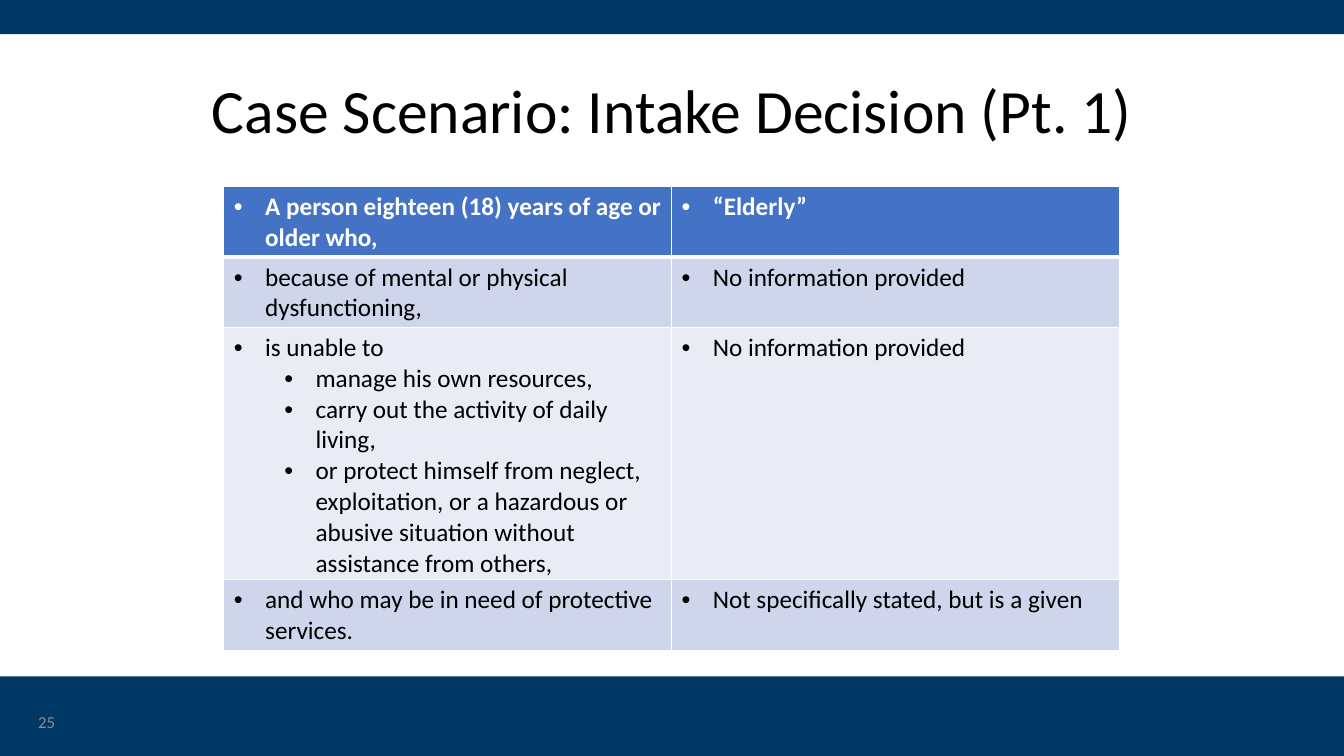
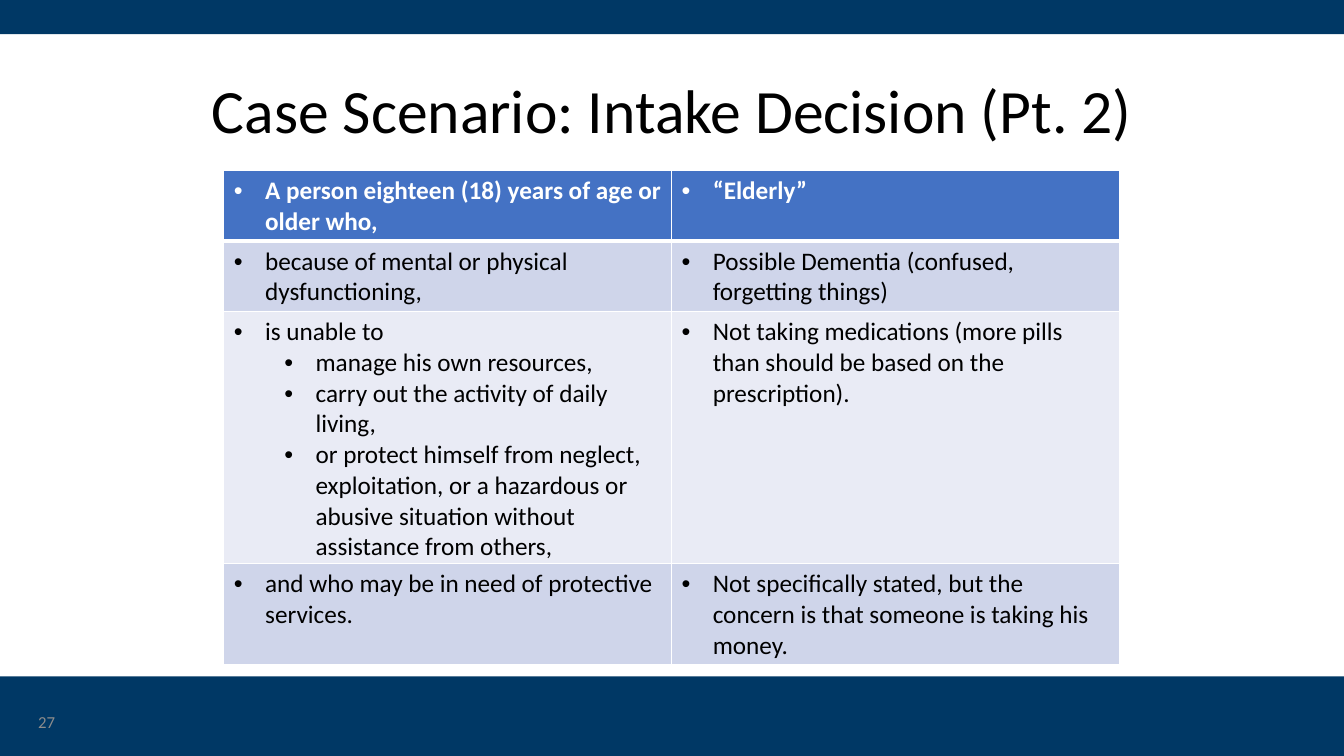
"""Build two case scenario slides, each with a criteria table."""
import dataclasses

import lxml.etree
import pptx
import pptx.dml.color
import pptx.enum.shapes
import pptx.enum.text
import pptx.oxml.ns
import pptx.presentation
import pptx.slide
import pptx.table
import pptx.util

Inches = pptx.util.Inches
Pt = pptx.util.Pt
RGBColor = pptx.dml.color.RGBColor
qn = pptx.oxml.ns.qn

NAVY = RGBColor(0x00, 0x38, 0x65)
BLUE = RGBColor(0x44, 0x72, 0xC4)
BAND_DARK = RGBColor(0xCF, 0xD5, 0xEA)
BAND_LIGHT = RGBColor(0xE9, 0xEB, 0xF5)
GRAY = RGBColor(0x8C, 0x8C, 0x8C)
BLACK = RGBColor(0x00, 0x00, 0x00)
WHITE = RGBColor(0xFF, 0xFF, 0xFF)

FONT = "Calibri"
SLIDE_W, SLIDE_H = 13.33, 7.5
COL_W = 4.44
LINE_H, CELL_PAD = 0.3, 0.1
HANGING, LEVEL_STEP = 0.31, 0.5
THIN, THICK = 1, 3


@dataclasses.dataclass(frozen=True)
class Band:
    """A full-width bar."""
    top: float
    height: float


@dataclasses.dataclass(frozen=True)
class Criterion:
    """One table row's requirement, with sub-items and its count of lines."""
    text: str
    lines: int = 2
    subitems: tuple[str, ...] = ()


@dataclasses.dataclass(frozen=True)
class Scenario:
    """What differs from one slide to the next."""
    title: str
    number: int
    table_top: float
    findings: tuple[str, ...]


BANDS = (Band(6.71, 0.79), Band(0, 0.34))

CRITERIA = (
    Criterion("A person eighteen (18) years of age or older who,"),
    Criterion("because of mental or physical dysfunctioning,"),
    Criterion("is unable to", 8, (
        "manage his own resources,",
        "carry out the activity of daily living,",
        "or protect himself from neglect, exploitation, or a hazardous or "
        "abusive situation without assistance from others,",
    )),
    Criterion("and who may be in need of protective services."),
)

SCENARIOS = (
    Scenario("Case Scenario: Intake Decision (Pt. 1)", 25, 1.85, (
        "“Elderly”",
        "No information provided",
        "No information provided",
        "Not specifically stated, but is a given",
    )),
    Scenario("Case Scenario: Intake Decision (Pt. 2)", 27, 1.69, (
        "“Elderly”",
        "Possible Dementia (confused, forgetting things)",
        "Not taking medications (more pills than should be based on the prescription).",
        "Not specifically stated, but the concern is that someone is taking his money.",
    )),
)


def style_run(r, size: float, color: RGBColor, bold: bool = False) -> None:
    """Set the font of a run."""
    r.font.name = FONT
    r.font.size = Pt(size)
    r.font.bold = bold
    r.font.color.rgb = color


def add_band(s: pptx.slide.Slide, band: Band) -> None:
    """Draw a navy bar across the slide."""
    sp = s.shapes.add_shape(pptx.enum.shapes.MSO_SHAPE.RECTANGLE, 0, Inches(band.top),
                            Inches(SLIDE_W), Inches(band.height))
    sp.shadow.inherit = False
    sp.fill.solid()
    sp.fill.fore_color.rgb = NAVY
    sp.line.fill.background()


def set_title(s: pptx.slide.Slide, text: str) -> None:
    """Place and format the title placeholder."""
    sp = s.shapes.title
    sp.left, sp.top, sp.width, sp.height = map(Inches, (0.92, 0.4, 11.5, 1.45))
    tf = sp.text_frame
    tf.text = text
    tf.auto_size = pptx.enum.text.MSO_AUTO_SIZE.NONE
    tf.vertical_anchor = pptx.enum.text.MSO_ANCHOR.MIDDLE
    p = tf.paragraphs[0]
    p.alignment = pptx.enum.text.PP_ALIGN.CENTER
    p.line_spacing = 0.9
    style_run(p.runs[0], 44, BLACK)


def add_slide_number(s: pptx.slide.Slide, number: int) -> None:
    """Write the slide number in the bottom band."""
    sp = s.shapes.add_textbox(Inches(0.28), Inches(6.96), Inches(3), Inches(0.4))
    tf = sp.text_frame
    tf.word_wrap = True
    tf.vertical_anchor = pptx.enum.text.MSO_ANCHOR.MIDDLE
    tf.text = str(number)
    style_run(tf.paragraphs[0].runs[0], 12, GRAY)


def set_bullet(p, level: int) -> None:
    """Give a paragraph a bullet with a hanging indent for its level."""
    p.level = level
    pPr = p._p.get_or_add_pPr()
    pPr.set("marL", str(Inches(HANGING + level * LEVEL_STEP)))
    pPr.set("indent", str(-Inches(HANGING)))
    lxml.etree.SubElement(pPr, qn("a:buFont"), typeface="Arial")
    lxml.etree.SubElement(pPr, qn("a:buChar"), char="•")


def set_borders(cell: pptx.table._Cell, row: int) -> None:
    """Draw white cell borders, thicker below the header row."""
    widths = {
        "L": THIN,
        "R": THIN,
        "T": THICK if row == 1 else THIN,
        "B": THICK if row == 0 else THIN,
    }
    tcPr = cell._tc.get_or_add_tcPr()
    for side, width in widths.items():
        ln = lxml.etree.SubElement(tcPr, qn(f"a:ln{side}"), w=str(Pt(width)))
        fill = lxml.etree.SubElement(ln, qn("a:solidFill"))
        lxml.etree.SubElement(fill, qn("a:srgbClr"), val=str(WHITE))


def fill_cell(cell: pptx.table._Cell, row: int, items: tuple[str, ...]) -> None:
    """Write bulleted items, the first at the top level, and style the cell."""
    header = row == 0
    set_borders(cell, row)
    cell.fill.solid()
    cell.fill.fore_color.rgb = BLUE if header else BAND_DARK if row % 2 else BAND_LIGHT
    cell.text_frame.text = "\n".join(items)
    for i, p in enumerate(cell.text_frame.paragraphs):
        set_bullet(p, min(i, 1))
        style_run(p.runs[0], 18, WHITE if header else BLACK, header)


def add_criteria_table(s: pptx.slide.Slide, scenario: Scenario) -> None:
    """Set each criterion beside its finding."""
    frame = s.shapes.add_table(len(CRITERIA), 2, Inches(2.22), Inches(scenario.table_top),
                               Inches(2 * COL_W), Inches(4.6))
    table = frame.table
    for column in table.columns:
        column.width = Inches(COL_W)
    for row, (criterion, finding) in enumerate(zip(CRITERIA, scenario.findings)):
        table.rows[row].height = Inches(criterion.lines * LINE_H + CELL_PAD)
        fill_cell(table.cell(row, 0), row, (criterion.text, *criterion.subitems))
        fill_cell(table.cell(row, 1), row, (finding,))


def add_scenario(prs: pptx.presentation.Presentation, scenario: Scenario) -> None:
    """Add one scenario slide."""
    s = prs.slides.add_slide(prs.slide_layouts.get_by_name("Title Only"))
    for band in BANDS:
        add_band(s, band)
    set_title(s, scenario.title)
    add_slide_number(s, scenario.number)
    add_criteria_table(s, scenario)


def main() -> None:
    """Build and save the presentation."""
    prs = pptx.Presentation()
    prs.slide_width, prs.slide_height = Inches(SLIDE_W), Inches(SLIDE_H)
    for scenario in SCENARIOS:
        add_scenario(prs, scenario)
    prs.save("out.pptx")


if __name__ == "__main__":
    main()
